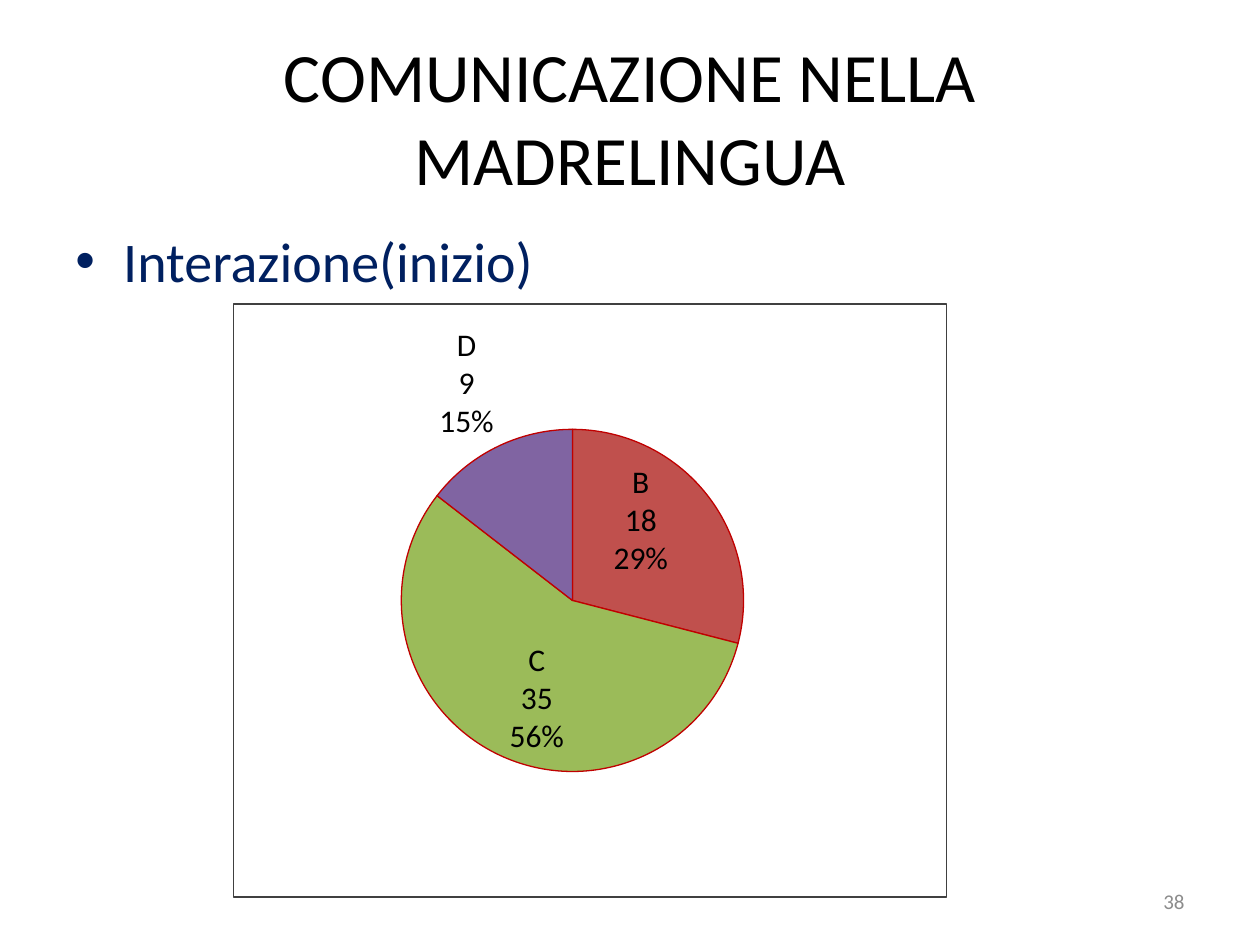
from lxml import etree
from pptx import Presentation
from pptx.chart.data import CategoryChartData
from pptx.dml.color import RGBColor
from pptx.enum.chart import XL_CHART_TYPE, XL_LABEL_POSITION
from pptx.enum.text import MSO_ANCHOR, PP_ALIGN
from pptx.oxml import parse_xml
from pptx.oxml.ns import nsdecls, qn
from pptx.util import Inches, Pt

PIE = XL_CHART_TYPE.PIE
BEST_FIT = XL_LABEL_POSITION.BEST_FIT
TOP, MIDDLE = MSO_ANCHOR.TOP, MSO_ANCHOR.MIDDLE
LEFT, CENTER, RIGHT = PP_ALIGN.LEFT, PP_ALIGN.CENTER, PP_ALIGN.RIGHT

WIDTH, HEIGHT = 10, 7.5
FONT = "Calibri"
COLORS = {
    "text": "000000",
    "body": "002060",
    "number": "8C8C8C",
    "frame": "404040",
    "outline": "C00000",
    "A": "4F81BD",
    "B": "C0504D",
    "C": "9BBB59",
    "D": "8064A2",
}
GRADES = {"A": 0, "B": 18, "C": 35, "D": 9}
PIE_LAYOUT = {"x": 0.235, "y": 0.21, "w": 0.48, "h": 0.58}


def color(name):
    """Return the named palette colour."""
    return RGBColor.from_string(COLORS[name])


def share_box(left, top, width, height):
    """Turn shares of the slide's size into a box of lengths."""
    return (Inches(left * WIDTH), Inches(top * HEIGHT),
            Inches(width * WIDTH), Inches(height * HEIGHT))


def add_text(slide, box, text, *, size, tint="text", align=LEFT, anchor=TOP):
    """Add a wrapped text box and return its paragraph."""
    frame = slide.shapes.add_textbox(*box).text_frame
    frame.word_wrap = True
    frame.vertical_anchor = anchor
    paragraph = frame.paragraphs[0]
    paragraph.alignment = align
    run = paragraph.add_run()
    run.text = text
    run.font.name = FONT
    run.font.size = Pt(size)
    run.font.color.rgb = color(tint)
    return paragraph


def add_bullet(slide, box, text):
    """Add a bulleted line with a hanging indent."""
    paragraph = add_text(slide, box, text, size=32, tint="body")
    paragraph.space_before = Pt(6.4)
    properties = paragraph._p.get_or_add_pPr()
    indent = Inches(0.38)
    properties.set("marL", str(indent))
    properties.set("indent", str(-indent))
    etree.SubElement(properties, qn("a:buFont"), typeface="Arial")
    etree.SubElement(properties, qn("a:buChar"), char="•")


def format_labels(series):
    """Label each slice with grade, count and share, leaving out empty grades."""
    labels = series.data_labels
    labels.show_category_name = True
    labels.show_value = True
    labels.show_percentage = True
    labels.show_legend_key = False
    labels.position = BEST_FIT
    labels.font.name = FONT
    labels.font.size = Pt(18)
    labels.font.color.rgb = color("text")
    element = series._element.find(qn("c:dLbls"))
    separator = parse_xml(f'<c:separator {nsdecls("c")}>\n</c:separator>')
    anchor = element.find(qn("c:showBubbleSize"))
    if anchor is None:
        anchor = element.find(qn("c:showPercent"))
    anchor.addnext(separator)
    empty = [index for index, count in enumerate(GRADES.values()) if not count]
    for position, index in enumerate(empty):
        element.insert(position, parse_xml(
            f'<c:dLbl {nsdecls("c")}><c:idx val="{index}"/>'
            '<c:delete val="1"/></c:dLbl>'))


def place_pie(chart):
    """Frame the chart and fix the pie's place inside it."""
    chart_element = chart.element.find(qn("c:chart"))
    chart_element.addnext(parse_xml(
        f'<c:spPr {nsdecls("c", "a")}><a:noFill/><a:ln w="{Pt(0.75)}"><a:solidFill>'
        f'<a:srgbClr val="{COLORS["frame"]}"/></a:solidFill></a:ln></c:spPr>'))
    plot_area = chart_element.find(qn("c:plotArea"))
    for layout in plot_area.findall(qn("c:layout")):
        plot_area.remove(layout)
    sizes = "".join(f'<c:{key} val="{value}"/>' for key, value in PIE_LAYOUT.items())
    plot_area.insert(0, parse_xml(
        f'<c:layout {nsdecls("c")}><c:manualLayout><c:layoutTarget val="inner"/>'
        f'<c:xMode val="edge"/><c:yMode val="edge"/>{sizes}'
        '</c:manualLayout></c:layout>'))


def add_grade_pie(slide, box):
    """Add the pie chart of pupils per grade."""
    data = CategoryChartData()
    data.categories = list(GRADES)
    data.add_series("Series 1", list(GRADES.values()))
    chart = slide.shapes.add_chart(PIE, *box, data).chart
    chart.has_title = False
    chart.has_legend = False
    chart.font.name = FONT
    chart.font.size = Pt(18)
    chart.font.color.rgb = color("text")
    chart.plots[0].vary_by_categories = True
    series = chart.plots[0].series[0]
    for index, grade in enumerate(GRADES):
        point = series.points[index].format
        point.fill.solid()
        point.fill.fore_color.rgb = color(grade)
        point.line.color.rgb = color("outline")
        point.line.width = Pt(0.75)
    format_labels(series)
    place_pie(chart)


def main():
    """Build and save the slide."""
    presentation = Presentation()
    presentation.slide_width = Inches(WIDTH)
    presentation.slide_height = Inches(HEIGHT)
    slide = presentation.slides.add_slide(presentation.slide_layouts[6])
    add_text(slide, share_box(0.05, 0.04, 0.9, 1 / 6),
             "COMUNICAZIONE NELLA MADRELINGUA", size=39.6, align=CENTER, anchor=MIDDLE)
    add_bullet(slide, share_box(0.05, 7 / 30, 0.9, 0.66), "Interazione(inizio)")
    add_text(slide, share_box(0.717, 0.927, 0.233, 0.053), "38",
             size=12, tint="number", align=RIGHT, anchor=MIDDLE)
    add_grade_pie(slide, share_box(0.185, 0.321, 0.567, 0.629))
    presentation.save("out.pptx")


if __name__ == "__main__":
    main()
